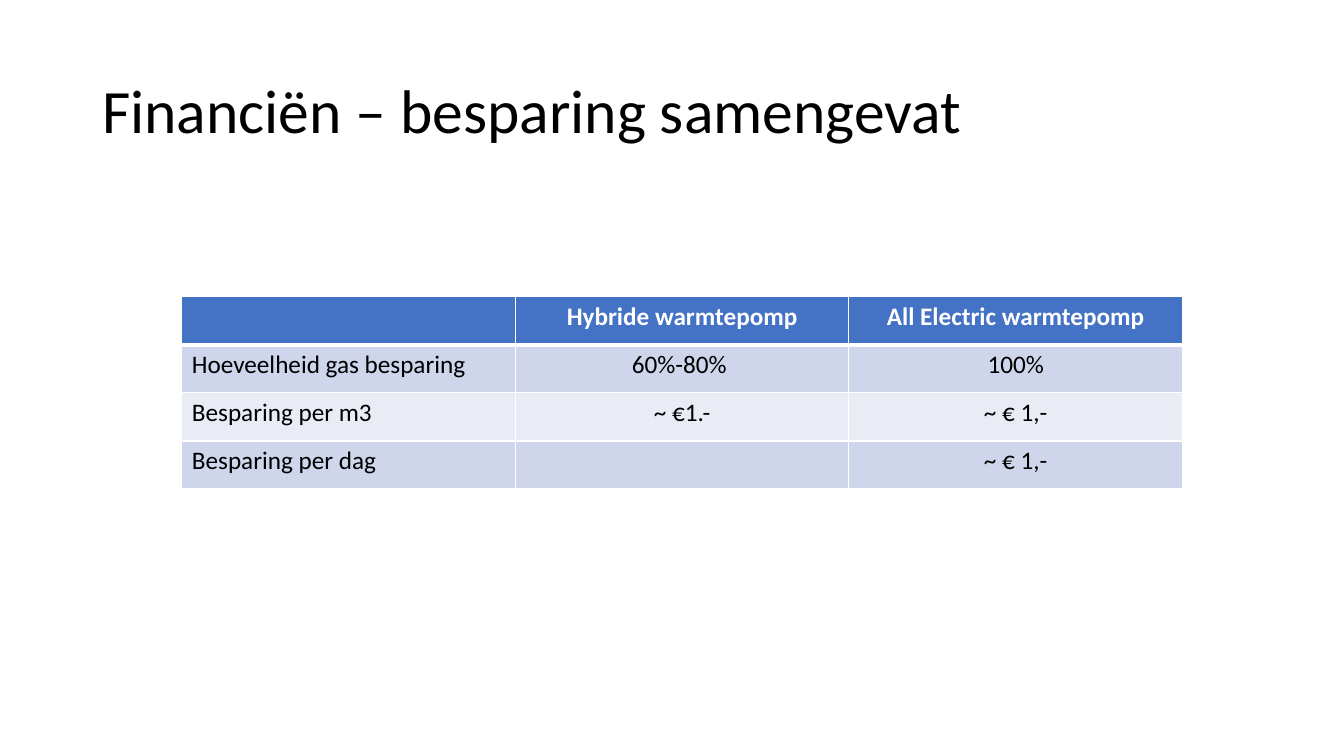
from lxml import etree
from pptx import Presentation
from pptx.dml import color
from pptx.enum import text
from pptx.oxml import ns
from pptx.util import Pt

FONT = "Calibri"
BLACK, WHITE, BLUE = "000000", "FFFFFF", "4472C4"
BANDS = ["CFD5EA", "E9EBF5"]
ROWS = [
    ["", "Hybride warmtepomp", "All Electric warmtepomp"],
    ["Hoeveelheid gas besparing", "60%-80% ", "100%"],
    ["Besparing per m3", "~ €1.-", "~ € 1,-"],
    ["Besparing per dag", "", "~ € 1,-"],
]


def rgb(code):
    return color.RGBColor.from_string(code)


def write(frame, words, tint, align, **form):
    para = frame.paragraphs[0]
    para.text = words
    para.alignment = align
    para.font.color.rgb = rgb(tint)
    for key, value in {"name": FONT, **form}.items():
        setattr(para.font, key, value)
    return para


def add_title(slide, words):
    box = slide.shapes.add_textbox(Pt(66), Pt(28.8), Pt(828), Pt(104.4))
    frame = box.text_frame
    frame.word_wrap = True
    frame.vertical_anchor = text.MSO_ANCHOR.MIDDLE
    para = write(frame, words, BLACK, text.PP_ALIGN.LEFT, size=Pt(44))
    para.line_spacing = 0.9


def set_edge(cell, side, width):
    props = cell._tc.get_or_add_tcPr()
    line = etree.SubElement(props, ns.qn("a:ln" + side), w=str(Pt(width)))
    fill = etree.SubElement(line, ns.qn("a:solidFill"))
    etree.SubElement(fill, ns.qn("a:srgbClr"), val=WHITE)


def add_grid(slide, rows):
    wide, high = 238.25, 34.4
    count = len(rows[0])
    frame = slide.shapes.add_table(len(rows), count, Pt(129.9), Pt(211.8),
                                   Pt(wide * count), Pt(high * len(rows)))
    grid = frame.table
    for col in grid.columns:
        col.width = Pt(wide)
    for i, row in enumerate(rows):
        grid.rows[i].height = Pt(high)
        head = i == 0
        for j, words in enumerate(row):
            cell = grid.cell(i, j)
            for side in "LRTB":
                thick = (head and side == "B") or (i == 1 and side == "T")
                set_edge(cell, side, 3 if thick else 1)
            cell.fill.solid()
            cell.fill.fore_color.rgb = rgb(BLUE if head else BANDS[(i - 1) % 2])
            align = text.PP_ALIGN.CENTER if j else text.PP_ALIGN.LEFT
            write(cell.text_frame, words, WHITE if head else BLACK, align,
                  size=Pt(18), bold=head)


def main():
    deck = Presentation()
    deck.slide_width, deck.slide_height = Pt(960), Pt(540)
    slide = deck.slides.add_slide(deck.slide_layouts[6])
    add_title(slide, "Financiën – besparing samengevat")
    add_grid(slide, ROWS)
    deck.save("out.pptx")


if __name__ == "__main__":
    main()
